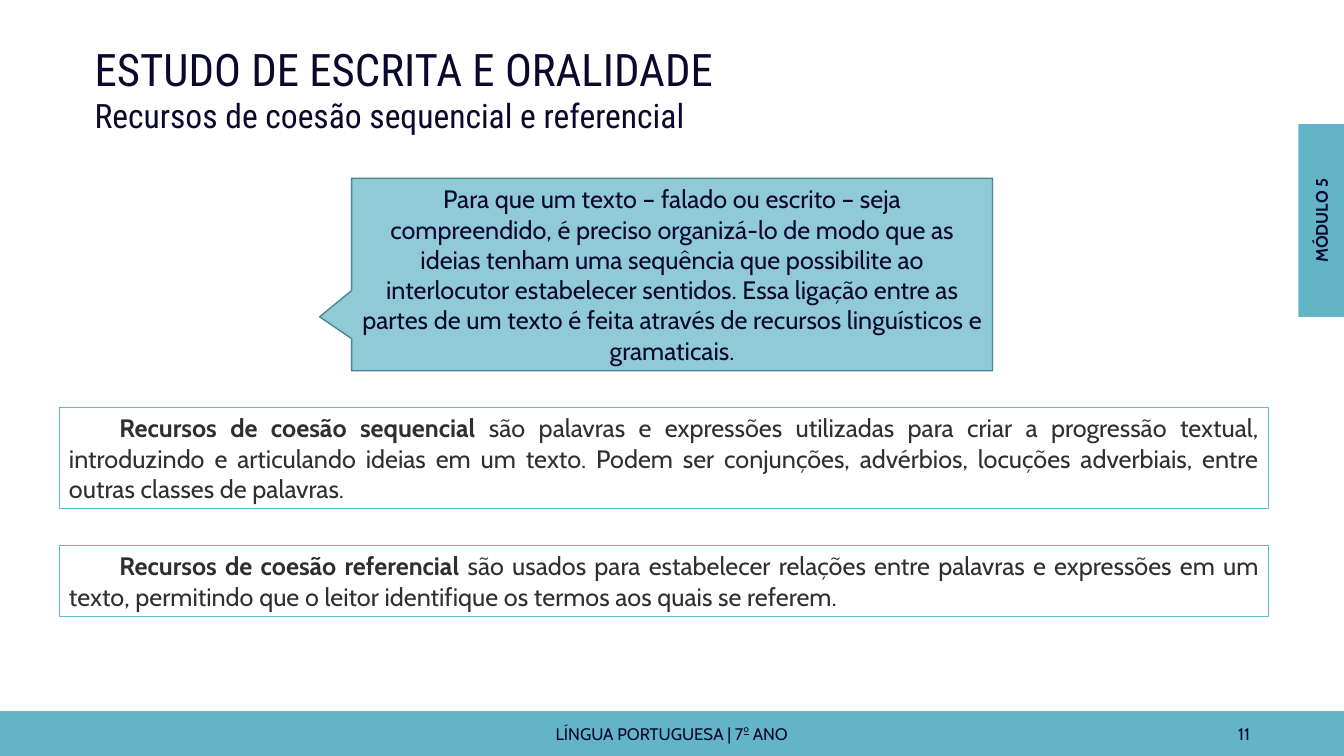
import pptx
import pptx.util
import pptx.dml.color
import pptx.enum.shapes
import pptx.enum.text
import pptx.oxml
import pptx.oxml.ns

Pt = pptx.util.Pt
RGBColor = pptx.dml.color.RGBColor
SHAPE = pptx.enum.shapes.MSO_SHAPE
ALIGN = pptx.enum.text.PP_ALIGN
ANCHOR = pptx.enum.text.MSO_ANCHOR

TEAL = RGBColor(0x62, 0xB4, 0xC6)
EDGE = RGBColor(0x49, 0x85, 0x92)
NAVY = RGBColor(0x0B, 0x08, 0x2E)
GRAY = RGBColor(0x2F, 0x2F, 0x2E)
WIDE, HIGH = 960, 540


def add_box(slide, box, kind=SHAPE.RECTANGLE, fill=None, line=None, width=0.75):
    """Add a flat shape; box is left, top, width, height in points."""
    shape = slide.shapes.add_shape(kind, *map(Pt, box))
    shape.shadow.inherit = False
    if fill is None:
        shape.fill.background()
    else:
        shape.fill.solid()
        shape.fill.fore_color.rgb = fill
    if line is None:
        shape.line.fill.background()
    else:
        shape.line.color.rgb = line
        shape.line.width = Pt(width)
    return shape


def style(para, size, color=NAVY, align=ALIGN.CENTER, face="Cabin", bold=None):
    para.alignment = align
    font = para.font
    font.name, font.size, font.bold = face, Pt(size), bold
    font.color.rgb = color


def add_label(slide, box, parts, align=ALIGN.CENTER, bold=None):
    """Add a small text box and return it with its runs."""
    label = slide.shapes.add_textbox(*map(Pt, box))
    frame = label.text_frame
    frame.word_wrap = True
    frame.vertical_anchor = ANCHOR.MIDDLE
    para = frame.paragraphs[0]
    for part in parts:
        para.add_run().text = part
    style(para, 12, align=align, bold=bold)
    return label, para.runs


def add_title(slide, box):
    title = slide.shapes.title
    title.left, title.top, title.width, title.height = map(Pt, box)
    frame = title.text_frame
    frame.word_wrap = True
    frame.auto_size = pptx.enum.text.MSO_AUTO_SIZE.NONE
    frame.vertical_anchor = ANCHOR.TOP
    frame.text = ("ESTUDO DE ESCRITA E ORALIDADE\n"
                  "Recursos de coesão sequencial e referencial")
    for para, size in zip(frame.paragraphs, (32, 24)):
        style(para, size, align=ALIGN.LEFT, face="Roboto Condensed")


def add_footer(slide, box):
    left, top, width, height = box
    add_box(slide, box, fill=TEAL)
    row = top + 2.5, 324, 27
    _, runs = add_label(slide, (left + (width - 324) / 2 - 0.2, row[0], 324, 27),
                        ("LÍNGUA PORTUGUESA | 7", "o", " ANO"))
    # Underlined raised ordinal
    runs[1].font.underline = True
    runs[1]._r.get_or_add_rPr().set("baseline", "45000")
    # Page number
    add_label(slide, (left + width - 282, row[0], 222, 27), ("11",), ALIGN.RIGHT)


def add_tab(slide, box):
    left, top, width, height = box
    add_box(slide, box, fill=TEAL)
    # Label as long as the tab is high, turned about the tab's centre
    thick = 21.8
    place = (left + (width - height) / 2, top + (height - thick) / 2, height, thick)
    label, _ = add_label(slide, place, ("MÓDULO 5",), bold=True)
    label.rotation = 270


def add_callout(slide, box, text):
    shape = add_box(slide, box, SHAPE.RECTANGULAR_CALLOUT, TEAL, EDGE, 1)
    shape.adjustments[0], shape.adjustments[1] = -0.55, 0.22
    # Fill at 70 % opacity
    color = shape._element.spPr.find(".//" + pptx.oxml.ns.qn("a:srgbClr"))
    color.append(pptx.oxml.parse_xml(
        '<a:alpha %s val="70000"/>' % pptx.oxml.ns.nsdecls("a")))
    frame = shape.text_frame
    frame.word_wrap = True
    frame.vertical_anchor = ANCHOR.MIDDLE
    frame.text = text
    style(frame.paragraphs[0], 18)


def add_note(slide, box, term, text):
    frame = add_box(slide, box, line=TEAL).text_frame
    frame.word_wrap = True
    frame.vertical_anchor = ANCHOR.MIDDLE
    para = frame.paragraphs[0]
    for part, bold in ((term, True), (text, False)):
        run = para.add_run()
        run.text, run.font.bold = part, bold
    style(para, 18, GRAY, ALIGN.JUSTIFY)
    # First-line indent
    props = para._p.get_or_add_pPr()
    props.set("marL", "0")
    props.set("indent", str(int(Pt(36))))


def main():
    deck = pptx.Presentation()
    deck.slide_width, deck.slide_height = Pt(WIDE), Pt(HIGH)
    slide = deck.slides.add_slide(deck.slide_layouts[5])

    add_footer(slide, (0, HIGH - 32, WIDE, 32))
    add_tab(slide, (WIDE - 32.6, 88.7, 32.6, 137.7))
    add_title(slide, (60.4, 26, 480, 75))
    add_note(slide, (42.2, 290.8, 864, 72.7), "Recursos de coesão sequencial ",
             "são palavras e expressões utilizadas para criar a progressão textual, "
             "introduzindo e articulando ideias em um texto. Podem ser conjunções, "
             "advérbios, locuções adverbiais, entre outras classes de palavras.")
    add_note(slide, (42.2, 389.5, 864, 50.9), "Recursos de coesão referencial ",
             "são usados para estabelecer relações entre palavras e expressões em um "
             "texto, permitindo que o leitor identifique os termos aos quais se referem.")
    add_callout(slide, (251.2, 127.3, 457.8, 137.5),
                "Para que um texto – falado ou escrito – seja compreendido, é preciso "
                "organizá-lo de modo que as ideias tenham uma sequência que possibilite "
                "ao interlocutor estabelecer sentidos. Essa ligação entre as partes de "
                "um texto é feita através de recursos linguísticos e gramaticais.")
    deck.save("out.pptx")


if __name__ == "__main__":
    main()
